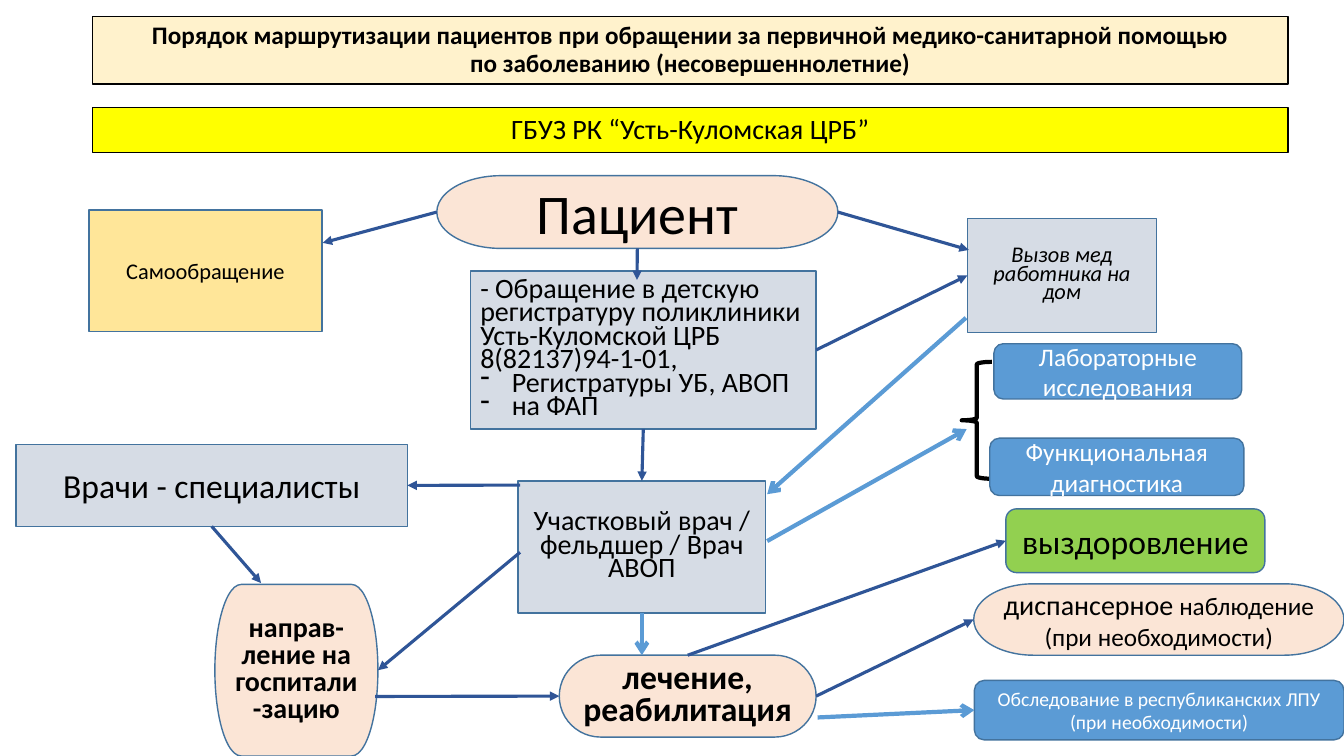
"""Builds the patient routing flowchart slide."""
from lxml.etree import SubElement
from pptx import Presentation
from pptx.dml.color import RGBColor
from pptx.enum.shapes import MSO_CONNECTOR, MSO_SHAPE
from pptx.enum.text import MSO_ANCHOR, MSO_AUTO_SIZE, PP_ALIGN
from pptx.oxml.ns import qn
from pptx.util import Pt

RECT, ROUND, OVAL = MSO_SHAPE.RECTANGLE, MSO_SHAPE.ROUNDED_RECTANGLE, MSO_SHAPE.FLOWCHART_TERMINATOR
TOP, LEFT, BOTTOM, RIGHT = range(4)
BLACK, WHITE, OUTLINE = "000000", "FFFFFF", "43739E"
GREY, PEACH, BLUE, NAVY = "D6DCE5", "FBE5D6", "5B9BD5", "2F5597"


def color(value):
    return RGBColor.from_string(value)


def add_text(paragraph, text, size=20, ink=BLACK, bold=False, italic=False, spacing=1.0, align=PP_ALIGN.CENTER):
    paragraph.alignment = align
    paragraph.line_spacing = spacing
    paragraph.space_before = Pt(0)
    for number, line in enumerate(text.split("\n")):
        if number:
            paragraph.add_line_break()
        run = paragraph.add_run()
        run.text = line
        run.font.name, run.font.size = "Calibri", Pt(size)
        run.font.bold, run.font.italic = bold, italic
        run.font.color.rgb = color(ink)


presentation = Presentation()
presentation.slide_width, presentation.slide_height = Pt(960), Pt(540)
slide = presentation.slides.add_slide(presentation.slide_layouts[5])

heading = slide.shapes.title
heading.left, heading.top, heading.width, heading.height = Pt(66), Pt(12), Pt(854), Pt(48)
heading.fill.solid()
heading.fill.fore_color.rgb = color("FFF2CC")
heading.line.color.rgb = color(BLACK)
heading.line.width = Pt(1)
heading.text_frame.auto_size = MSO_AUTO_SIZE.NONE
heading.text_frame.vertical_anchor = MSO_ANCHOR.MIDDLE
add_text(
    heading.text_frame.paragraphs[0],
    "Порядок маршрутизации пациентов при обращении за первичной медико-санитарной помощью\n"
    "по заболеванию (несовершеннолетние)",
    size=18, bold=True, spacing=0.9)

brace = slide.shapes.add_shape(MSO_SHAPE.LEFT_BRACE, Pt(687), Pt(258.5), Pt(21.5), Pt(83.5))
brace.shadow.inherit = False
brace.fill.background()
brace.line.color.rgb = color(BLACK)
brace.line.width = Pt(3)

steps = [
    ("hospital_name", RECT, (66, 77, 854, 32), "FFFF00", "ГБУЗ РК “Усть-Куломская ЦРБ”", dict(spacing=0.9)),
    ("doctor", RECT, (370, 343.5, 177, 94.5), GREY, "Участковый врач / фельдшер / Врач АВОП", dict(spacing=0.7)),
    ("registry", RECT, (336, 193.5, 247, 113), GREY,
     "- Обращение в детскую регистратуру поликлиники Усть-Куломской ЦРБ 8(82137)94-1-01,",
     dict(spacing=0.7, align=PP_ALIGN.LEFT)),
    ("home_call", RECT, (691, 156, 135, 81.5), GREY, "Вызов мед работника на дом",
     dict(size=16, italic=True, spacing=0.7)),
    ("patient", OVAL, (312, 125.5, 286.5, 52), PEACH, "Пациент", dict(size=40)),
    ("specialists", RECT, (11.5, 317.5, 279.5, 58.5), GREY, "Врачи - специалисты", dict(size=24)),
    ("treatment", OVAL, (399.5, 468, 183.5, 58.5), PEACH, "лечение, реабилитация",
     dict(size=24, bold=True, spacing=0.8)),
    ("observation", OVAL, (695.5, 417, 264.5, 51), PEACH, "диспансерное", dict(size=20)),
    ("self_referral", RECT, (63.5, 150, 166.5, 87), "FFE699", "Самообращение", dict(size=16)),
    ("recovery", ROUND, (718.5, 363.5, 185, 45.5), "92D050", "выздоровление", dict(size=24)),
    ("admission", OVAL, (153.5, 417.5, 116.5, 122.5), PEACH, "направ-ление на госпитали-зацию",
     dict(bold=True, spacing=0.8)),
    ("laboratory", ROUND, (710, 245.5, 177, 39.5), BLUE, "Лабораторные исследования", dict(size=18, ink=WHITE)),
    ("diagnostics", ROUND, (707, 313, 181.5, 41), BLUE, "Функциональная диагностика", dict(size=18, ink=WHITE)),
    ("republic", ROUND, (696, 486, 264, 42.5), BLUE, "Обследование в республиканских ЛПУ (при необходимости)",
     dict(size=14, ink=WHITE)),
]
boxes = {}
for step, outline, place, fill, text, style in steps:
    box = slide.shapes.add_shape(outline, *map(Pt, place))
    box.shadow.inherit = False
    box.fill.solid()
    box.fill.fore_color.rgb = color(fill)
    box.line.color.rgb = color(BLACK if step == "hospital_name" else OUTLINE)
    box.line.width = Pt(1)
    box.text_frame.word_wrap = True
    box.text_frame.vertical_anchor = MSO_ANCHOR.MIDDLE
    add_text(box.text_frame.paragraphs[0], text, **style)
    boxes[step] = box

add_text(boxes["observation"].text_frame.paragraphs[0], " наблюдение (при необходимости)", size=18)
for office in ("Регистратуры УБ, АВОП", "на ФАП"):
    entry = boxes["registry"].text_frame.add_paragraph()
    properties = entry._p.get_or_add_pPr()
    properties.set("marL", str(Pt(22.5)))
    properties.set("indent", str(Pt(-22.5)))
    SubElement(properties, qn("a:buChar"), char="-")
    add_text(entry, office, spacing=0.7, align=PP_ALIGN.LEFT)

routes = [
    (("patient", LEFT), (230.5, 173.5), NAVY),
    (("patient", BOTTOM), (455, 200), NAVY),
    (("patient", RIGHT), (692, 178.5), NAVY),
    (("registry", BOTTOM), ("doctor", TOP), NAVY),
    (("registry", RIGHT), ("home_call", LEFT), NAVY),
    ((371.5, 346.5), ("specialists", RIGHT), NAVY),
    (("specialists", BOTTOM), (186.5, 416.5), NAVY),
    ((268, 497.5), ("treatment", LEFT), NAVY),
    (("treatment", TOP), ("recovery", LEFT), NAVY),
    (("treatment", RIGHT), ("observation", LEFT), NAVY),
    ((371.5, 394.5), ("admission", RIGHT), NAVY),
    ((690, 227), (548, 353), BLUE),
    ((548, 386.5), (690.5, 306.5), BLUE),
    (("doctor", BOTTOM), (458.5, 468), BLUE),
    ((584, 512.5), ("republic", LEFT), BLUE),
]
for start, end, ink in routes:
    free_ends = [(0, 0) if isinstance(point[0], str) else point for point in (start, end)]
    arrow = slide.shapes.add_connector(MSO_CONNECTOR.STRAIGHT, *(Pt(value) for point in free_ends for value in point))
    for point, connect in ((start, arrow.begin_connect), (end, arrow.end_connect)):
        if isinstance(point[0], str):
            connect(boxes[point[0]], point[1])
    arrow.line.color.rgb = color(ink)
    arrow.line.width = Pt(2.25 if ink == NAVY else 3)
    SubElement(arrow.line._get_or_add_ln(), qn("a:tailEnd"), type="triangle" if ink == NAVY else "arrow")
    SubElement(arrow._element.spPr, qn("a:effectLst"))

presentation.save("out.pptx")
